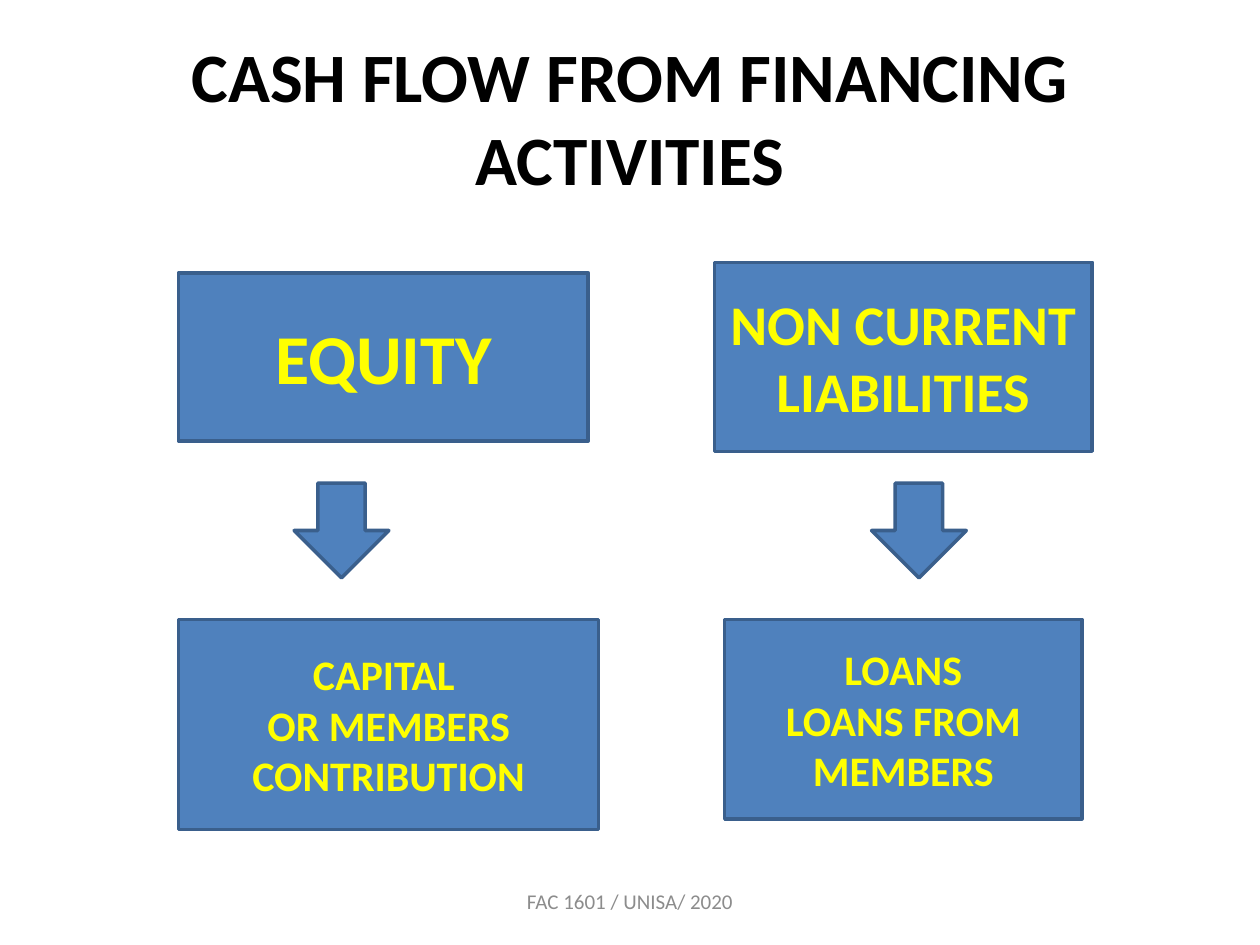
from dataclasses import dataclass

from lxml.etree import SubElement
from pptx import Presentation
from pptx.dml.color import RGBColor
from pptx.enum.shapes import MSO_SHAPE as Shape
from pptx.enum.text import MSO_ANCHOR as Anchor, MSO_AUTO_SIZE as AutoSize, PP_ALIGN as Align
from pptx.oxml.ns import qn
from pptx.util import Cm, Pt

# Content: places are left, top, width, height in cm
TITLE = "CASH FLOW FROM FINANCING ACTIVITIES"
TITLE_PLACE = (1.27, 0.76, 22.86, 3.18)
FOOTER = "FAC 1601 / UNISA/ 2020"
FOOTER_PLACE = (8.68, 17.65, 8.04, 1.02)

# Each branch: source box, arrow left edge, result box
BRANCHES = [
    {
        "source": (["EQUITY"], 40, (3.6, 5.5, 8.26, 3.39)),
        "arrow_left": 5.93,
        "result": (["CAPITAL ", "OR MEMBERS CONTRIBUTION"], 24, (3.6, 12.49, 8.47, 4.23)),
    },
    {
        "source": (["NON CURRENT LIABILITIES"], 32, (14.4, 5.29, 7.62, 3.81)),
        "arrow_left": 17.57,
        "result": (["LOANS", "LOANS FROM MEMBERS"], 24, (14.61, 12.49, 7.2, 4.02)),
    },
]
ARROW_TOP, ARROW_SIZE = 9.74, 1.91


@dataclass(frozen=True)
class Theme:
    font: str = "Calibri"
    title_size: float = 39.6
    footer_size: float = 12
    title: str = "000000"
    footer: str = "8C8C8C"
    label: str = "FFFF00"
    label_edge: str = "054697"
    fill: str = "4F81BD"
    line: str = "3A5F8C"
    line_width: float = 2


THEME = Theme()


def lengths(place):
    return [Cm(value) for value in place]


def write(shape, lines, size, color, bold=False, edge=None):
    """Fill a shape with centred paragraphs, one run each."""
    frame = shape.text_frame
    frame.word_wrap = True
    frame.auto_size = AutoSize.NONE
    frame.vertical_anchor = Anchor.MIDDLE
    for index, line in enumerate(lines):
        para = frame.paragraphs[0] if index == 0 else frame.add_paragraph()
        para.alignment = Align.CENTER
        span = para.add_run()
        span.text = line
        font = span.font
        font.name, font.size, font.bold = THEME.font, Pt(size), bold
        font.color.rgb = RGBColor.from_string(color)
        if edge:
            outline_text(span, edge)


def outline_text(span, color):
    properties = span.font._element
    outline = SubElement(properties, qn("a:ln"), w=str(Pt(1)))
    fill = SubElement(outline, qn("a:solidFill"))
    SubElement(fill, qn("a:srgbClr"), val=color)
    properties.insert(0, outline)


def add_block(page, kind, place):
    block = page.shapes.add_shape(kind, *lengths(place))
    block.shadow.inherit = False
    block.fill.solid()
    block.fill.fore_color.rgb = RGBColor.from_string(THEME.fill)
    block.line.color.rgb = RGBColor.from_string(THEME.line)
    block.line.width = Pt(THEME.line_width)
    return block


def add_label_box(page, lines, size, place):
    box = add_block(page, Shape.RECTANGLE, place)
    write(box, lines, size, THEME.label, bold=True, edge=THEME.label_edge)


def main():
    deck = Presentation()
    deck.slide_width, deck.slide_height = Cm(25.4), Cm(19.05)
    page = deck.slides.add_slide(deck.slide_layouts[5])

    # Title
    title = page.shapes.title
    title.left, title.top, title.width, title.height = lengths(TITLE_PLACE)
    write(title, [TITLE], THEME.title_size, THEME.title, bold=True)

    # Branches: source, arrow, result
    for branch in BRANCHES:
        add_label_box(page, *branch["source"])
        add_block(page, Shape.DOWN_ARROW,
                  (branch["arrow_left"], ARROW_TOP, ARROW_SIZE, ARROW_SIZE))
        add_label_box(page, *branch["result"])

    # Footer
    footer = page.shapes.add_textbox(*lengths(FOOTER_PLACE))
    write(footer, [FOOTER], THEME.footer_size, THEME.footer)

    deck.save("out.pptx")


if __name__ == "__main__":
    main()
